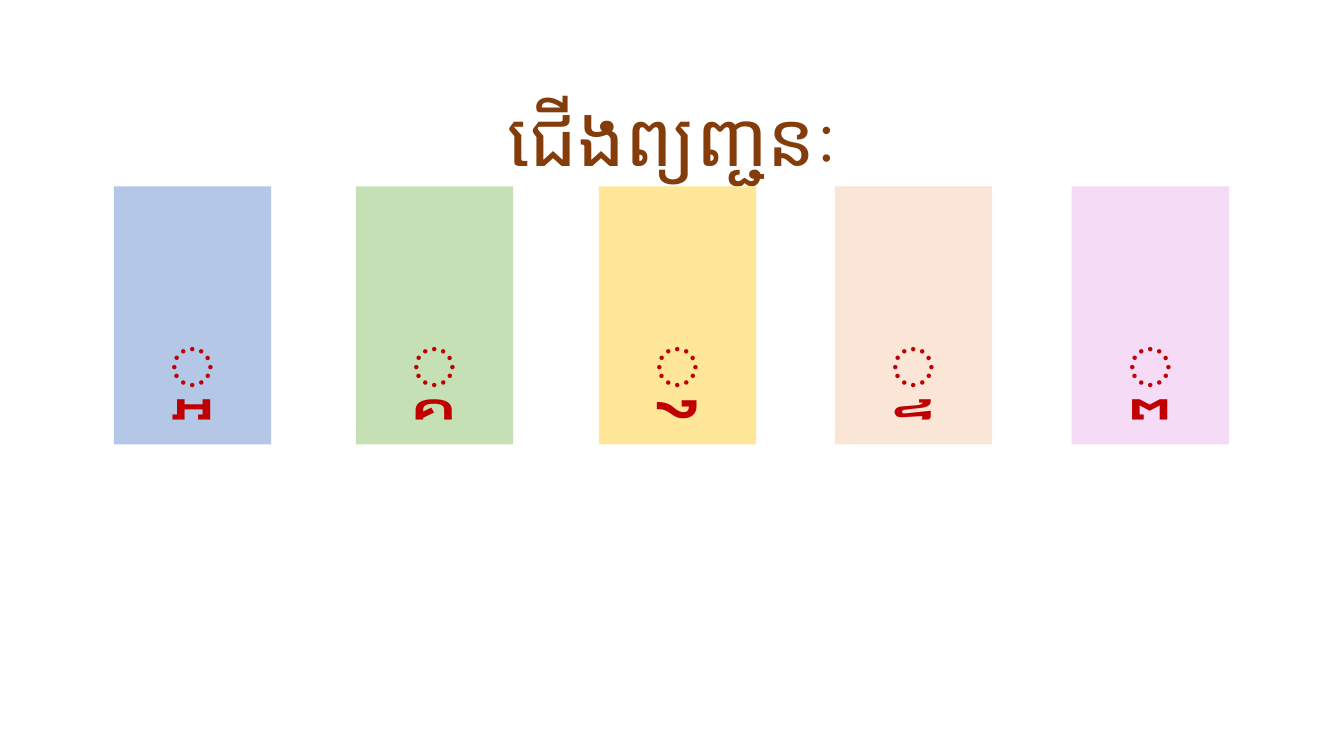
"""Build a slide of Khmer subscript consonants on coloured cards."""
from typing import NamedTuple

from pptx import Presentation
from pptx.dml.color import RGBColor
from pptx.enum.shapes import MSO_SHAPE
from pptx.enum.text import MSO_ANCHOR, PP_ALIGN
from pptx.util import Inches, Pt

BROWN = RGBColor(0x84, 0x3C, 0x0B)
RED = RGBColor(0xC0, 0x00, 0x00)
BLUE = RGBColor(0xB4, 0xC7, 0xE7)
GREEN = RGBColor(0xC5, 0xE0, 0xB4)
YELLOW = RGBColor(0xFF, 0xE6, 0x99)
PEACH = RGBColor(0xFB, 0xE5, 0xD6)
PINK = RGBColor(0xF6, 0xDB, 0xF7)


class Card(NamedTuple):
    """One subscript letter and its coloured card."""
    left: float
    text: str
    fill: RGBColor


CARDS = [
    Card(1.13, "្អ", BLUE),
    Card(3.53, "្គ", GREEN),
    Card(5.94, "្ញ", YELLOW),
    Card(8.28, "្ទ", PEACH),
    Card(10.63, "្ព", PINK),
]


def write(shape, text: str, *, font: str, size: float, color: RGBColor,
          lines: float, anchor: MSO_ANCHOR) -> None:
    """Put one centred paragraph in a shape."""
    frame = shape.text_frame
    frame.word_wrap = True
    frame.vertical_anchor = anchor
    para = frame.paragraphs[0]
    para.alignment = PP_ALIGN.CENTER
    para.line_spacing = lines
    run = para.add_run()
    run.text = text
    run.font.name = font
    run.font.size = Pt(size)
    run.font.color.rgb = color


def draw(slide, card: Card) -> None:
    """Draw a card with its letter."""
    shape = slide.shapes.add_shape(
        MSO_SHAPE.RECTANGLE, Inches(card.left), Inches(1.85),
        Inches(1.56), Inches(2.56))
    shape.shadow.inherit = False
    shape.fill.solid()
    shape.fill.fore_color.rgb = card.fill
    shape.line.fill.background()
    write(shape, card.text, font="Calibri", size=66, color=RED,
          lines=2.0, anchor=MSO_ANCHOR.TOP)


def main() -> None:
    """Build and save the deck."""
    deck = Presentation()
    deck.slide_width = Inches(13.33)
    deck.slide_height = Inches(7.5)
    slide = deck.slides.add_slide(deck.slide_layouts[6])
    title = slide.shapes.add_textbox(
        Inches(0.92), Inches(0.4), Inches(11.5), Inches(1.45))
    write(title, "ជើងព្យញ្ជនៈ", font="Arial", size=54, color=BROWN,
          lines=1.5, anchor=MSO_ANCHOR.MIDDLE)
    for card in CARDS:
        draw(slide, card)
    deck.save("out.pptx")


if __name__ == "__main__":
    main()
